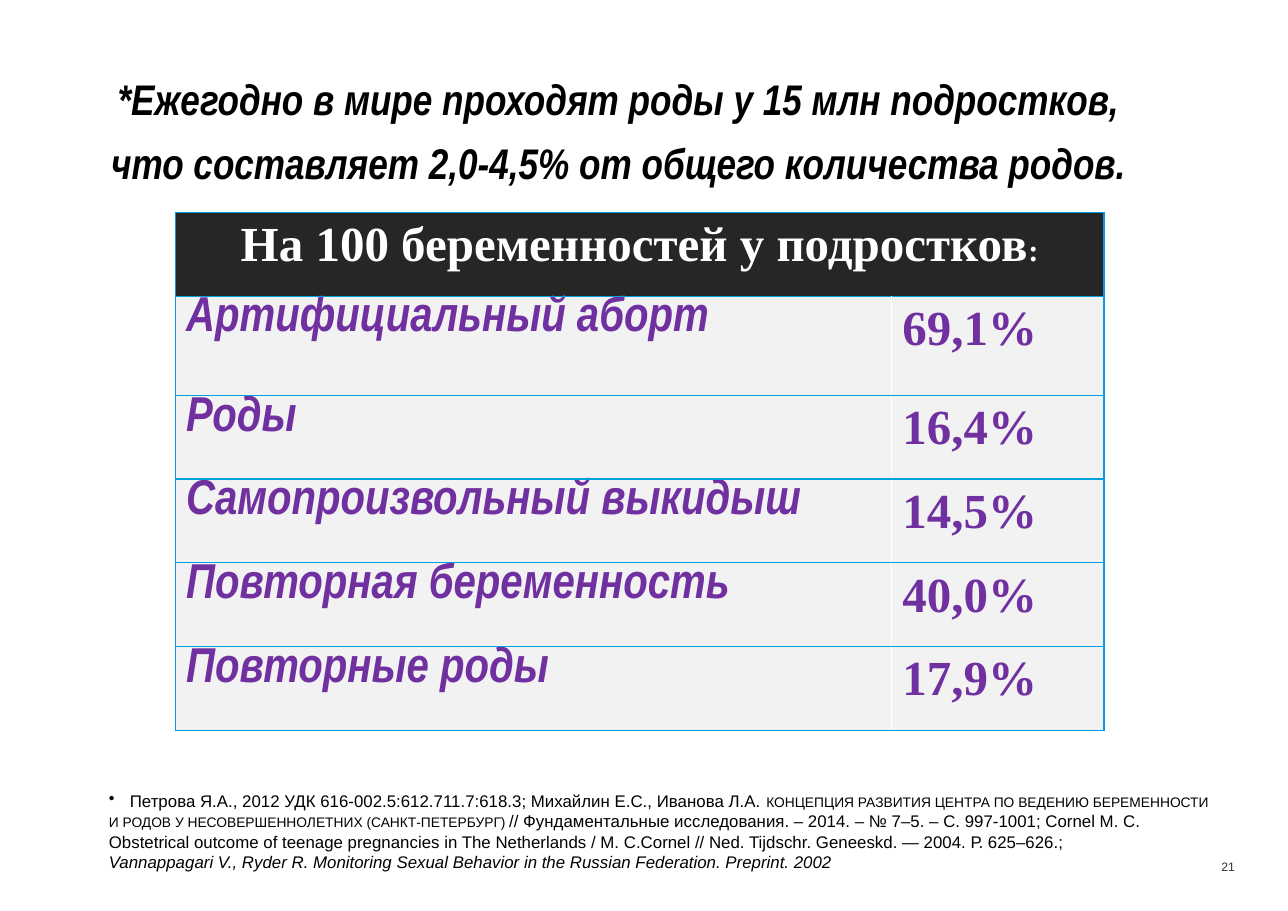
import pptx
import pptx.dml.color
import pptx.enum.text
import pptx.oxml
import pptx.util
from pptx.oxml.ns import nsdecls
from pptx.util import Inches

ALIGN = pptx.enum.text.PP_ALIGN
ANCHOR = pptx.enum.text.MSO_ANCHOR


def color(value):
    return pptx.dml.color.RGBColor.from_string(value)


class SlideBuilder:
    SANS, NARROW, SERIF = "Arial", "Arial Narrow", "Times New Roman"
    BLACK, GREY, WHITE = "000000", "313131", "FFFFFF"
    PURPLE, DARK, LIGHT, BLUE = "7030A0", "262626", "F2F2F2", "00A1DE"

    def __init__(self, presentation):
        self.slide = presentation.slides.add_slide(presentation.slide_layouts[5])

    def style(self, paragraph, name, size, ink, bold=False, italic=False):
        font = paragraph.font
        font.name, font.size = name, pptx.util.Pt(size)
        font.bold, font.italic = bold, italic
        font.color.rgb = color(ink)

    def frame(self, shape, margin_x=0.1, margin_y=0.05, wrap=True, anchor=ANCHOR.TOP):
        """Prepare the text frame of a shape and return it."""
        frame = shape.text_frame
        frame.word_wrap = wrap
        frame.auto_size = pptx.enum.text.MSO_AUTO_SIZE.NONE
        frame.vertical_anchor = anchor
        frame.margin_left = frame.margin_right = Inches(margin_x)
        frame.margin_top = frame.margin_bottom = Inches(margin_y)
        return frame

    def title(self, lines, left, top, width, height):
        shape = self.slide.shapes.title
        shape.left, shape.top = Inches(left), Inches(top)
        shape.width, shape.height = Inches(width), Inches(height)
        frame = self.frame(shape)
        frame.text = "\n".join(lines)
        for index, paragraph in enumerate(frame.paragraphs):
            paragraph.alignment = ALIGN.CENTER
            paragraph.space_before = pptx.util.Pt(5 if index else 0)
            paragraph.space_after = pptx.util.Pt(3)
            self.style(paragraph, self.NARROW, 28, self.BLACK, True, True)

    def cell(self, cell, text, fill, name, ink, italic=False, margin_top=0.05, edges="TB"):
        cell.fill.solid()
        cell.fill.fore_color.rgb = color(fill)
        cell.margin_top = Inches(margin_top)
        cell.text = text
        paragraph = cell.text_frame.paragraphs[0]
        self.style(paragraph, name, 32, ink, True, italic)
        properties = cell._tc.get_or_add_tcPr()
        for index, edge in enumerate(edge for edge in "LRTB" if edge in edges):
            properties.insert(index, pptx.oxml.parse_xml(
                f'<a:ln{edge} {nsdecls("a")} w="12700"><a:solidFill>'
                f'<a:srgbClr val="{self.BLUE}"/></a:solidFill></a:ln{edge}>'))
        return paragraph

    def table(self, heading, rows, left, top, widths, heights):
        table = self.slide.shapes.add_table(
            len(heights), len(widths), Inches(left), Inches(top),
            Inches(sum(widths)), Inches(sum(heights))).table
        for column, width in zip(table.columns, widths):
            column.width = Inches(width)
        for row, height in zip(table.rows, heights):
            row.height = Inches(height)
        table.cell(0, 0).merge(table.cell(0, 1))
        paragraph = self.cell(table.cell(0, 0), heading, self.DARK,
                              self.SERIF, self.WHITE, edges="LRTB")
        paragraph.alignment = ALIGN.CENTER
        colon = paragraph.add_run()
        colon.text = ":"
        colon.font.size = pptx.util.Pt(20)
        for index, (label, value) in enumerate(rows, start=1):
            self.cell(table.cell(index, 0), label, self.LIGHT, self.NARROW,
                      self.PURPLE, italic=True, margin_top=0, edges="LTB")
            self.cell(table.cell(index, 1), value, self.LIGHT, self.SERIF,
                      self.PURPLE, edges="RTB")

    def text_box(self, left, top, width, height, **options):
        shape = self.slide.shapes.add_textbox(
            Inches(left), Inches(top), Inches(width), Inches(height))
        return self.frame(shape, **options)

    def references(self, lines, left, top, width, height):
        """Each line is a list of (text, size) runs; the last line is italic."""
        frame = self.text_box(left, top, width, height, wrap=False)
        for index, runs in enumerate(lines):
            paragraph = frame.paragraphs[0] if index == 0 else frame.add_paragraph()
            paragraph.alignment = ALIGN.LEFT
            if index == 0:
                properties = paragraph._p.get_or_add_pPr()
                properties.set("marL", str(Inches(0.19)))
                properties.set("indent", str(Inches(-0.19)))
                properties.append(pptx.oxml.parse_xml(
                    f'<a:buChar {nsdecls("a")} char="•"/>'))
            self.style(paragraph, self.SANS, 11, self.BLACK, italic=index == len(lines) - 1)
            for text, size in runs:
                run = paragraph.add_run()
                run.text = text
                if size != 11:
                    run.font.size = pptx.util.Pt(size)

    def page_number(self, number, left, top, width, height):
        frame = self.text_box(left, top, width, height, margin_x=0, margin_y=0,
                              anchor=ANCHOR.MIDDLE)
        frame.text = str(number)
        paragraph = frame.paragraphs[0]
        paragraph.alignment = ALIGN.RIGHT
        self.style(paragraph, self.SANS, 8, self.GREY)


def main():
    presentation = pptx.Presentation()
    presentation.slide_width = Inches(11.69)
    presentation.slide_height = Inches(8.27)
    builder = SlideBuilder(presentation)
    builder.title(["*Ежегодно в мире проходят роды у 15 млн подростков,",
                   "что составляет 2,0-4,5% от общего количества родов."],
                  0.49, 0.61, 10.24, 1.25)
    builder.table("На 100 беременностей у подростков",
                  [("Артифициальный аборт", "69,1%"),
                   ("Роды", "16,4%"),
                   ("Cамопроизвольный выкидыш", "14,5%"),
                   ("Повторная беременность", "40,0%"),
                   ("Повторные роды", "17,9%")],
                  1.59, 1.93, [6.5, 1.93], [0.76, 0.9] + [0.76] * 4)
    builder.references([
        [("Петрова Я.А., 2012 УДК 616-002.5:612.711.7:618.3; "
          "Михайлин Е.С., Иванова Л.А. ", 11),
         ("КОНЦЕПЦИЯ РАЗВИТИЯ ЦЕНТРА ПО ВЕДЕНИЮ БЕРЕМЕННОСТИ", 9)],
        [("И РОДОВ У НЕСОВЕРШЕННОЛЕТНИХ (САНКТ-ПЕТЕРБУРГ) ", 9),
         ("// Фундаментальные исследования. – 2014. – № 7–5. – С. 997-1001; "
          "Cornel M. C.", 11)],
        [("Obstetrical outcome of teenage pregnancies in The Netherlands / "
          "М. С.Cornel // Ned. Tijdschr. Geneeskd. — 2004. Р. 625–626.;", 11)],
        [("Vannappagari V., Ryder R. Monitoring Sexual Behavior in the Russian "
          "Federation. Preprint. 2002", 11)],
    ], 0.89, 7.13, 10.33, 0.85)
    builder.page_number(21, 10.2, 7.72, 1.01, 0.3)
    presentation.save("out.pptx")


if __name__ == "__main__":
    main()
